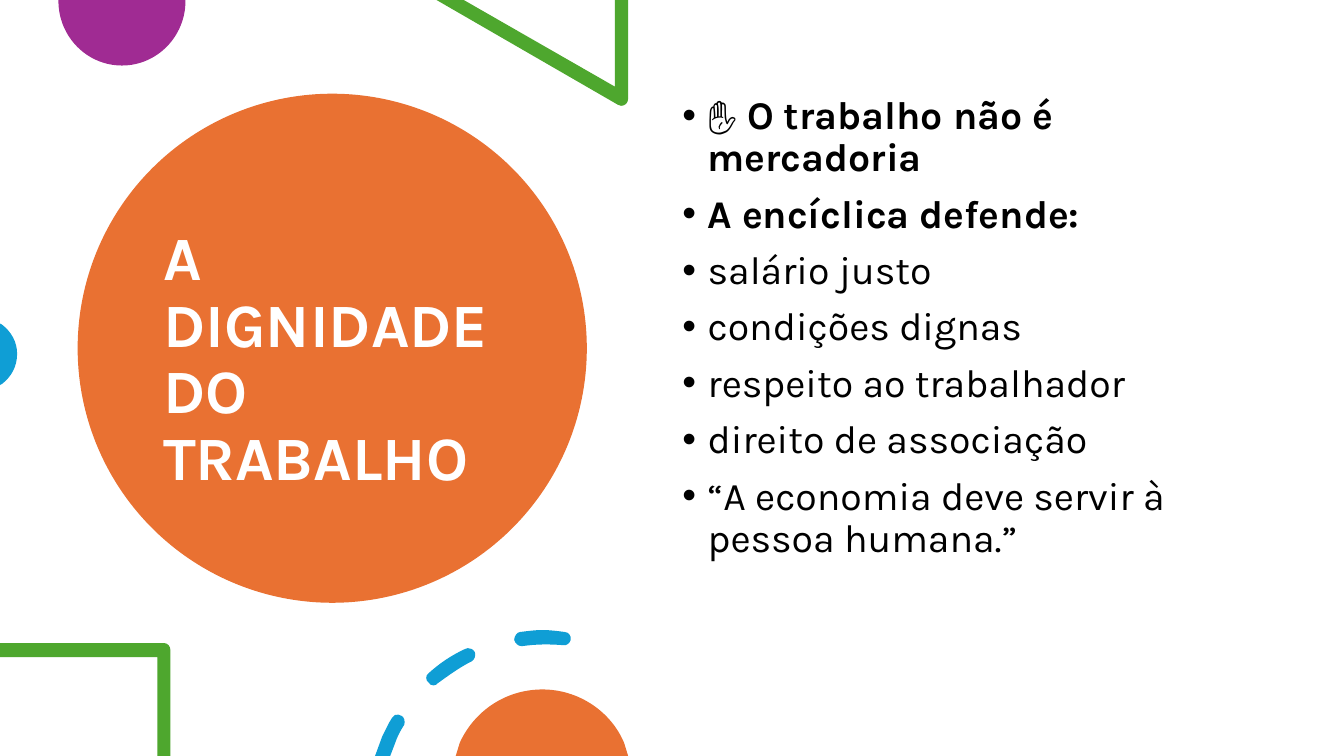
"""Build the slide on the dignity of work."""
from lxml import etree
from pptx import Presentation
from pptx import util as u
from pptx.dml.color import RGBColor
from pptx.enum import shapes, text
from pptx.oxml.ns import qn

FONT = "Karla"
ORANGE, PURPLE, GREEN, BLUE = "E97132", "A02B93", "4EA72E", "0F9ED5"
WHITE, BLACK = "FFFFFF", "000000"

TITLE = [("A DIGNIDADE DO TRABALHO", True)]
POINTS = [
    ("✋ O trabalho não é mercadoria", True),
    ("A encíclica defende:", True),
    ("salário justo", False),
    ("condições dignas", False),
    ("respeito ao trabalhador", False),
    ("direito de associação", False),
    ("“A economia deve servir à pessoa humana.”", False),
]

DISC = (0.77, 0.93, 5.05, 5.05)
TITLE_BOX = (1.52, 1.35, 3.54, 4.45)
POINTS_BOX = (6.67, 0.9, 5.75, 5.35)

TOP_DISC = [(1.84, 0), (0.58, 0), (0.58, 0.01), (0.58, 0.36, 0.86, 0.65, 1.21, 0.65),
            (1.56, 0.65, 1.84, 0.36, 1.84, 0.01)]
TRIANGLE = [(6.23, 0), (6.1, 0), (6.1, 0.86), (4.6, 0), (4.33, 0), (6.13, 1.04),
            (6.14, 1.05, 6.15, 1.05, 6.16, 1.05), (6.2, 1.05, 6.23, 1.02, 6.23, 0.98)]
LEFT_DISC = [(0, 3.21), (0, 3.82), (0.02, 3.81), (0.11, 3.74, 0.17, 3.64, 0.17, 3.51),
             (0.17, 3.39, 0.11, 3.29, 0.02, 3.22)]
FRAME = [(1.63, 6.38), (0, 6.38), (0, 6.52), (1.56, 6.52), (1.56, 7.5), (1.69, 7.5),
         (1.69, 6.45), (1.69, 6.41, 1.66, 6.38, 1.63, 6.38)]
LOW_DASH = [(3.95, 7.09), (3.93, 7.08, 3.9, 7.1, 3.89, 7.12),
            (3.85, 7.18, 3.82, 7.25, 3.79, 7.31), (3.72, 7.5), (3.87, 7.5), (3.92, 7.37),
            (3.94, 7.31, 3.97, 7.25, 4.01, 7.19), (4.02, 7.16, 4.01, 7.11, 3.98, 7.1),
            (3.97, 7.09, 3.96, 7.09, 3.95, 7.09)]
MID_DASH = [(4.64, 6.43), (4.63, 6.43, 4.62, 6.43, 4.61, 6.44),
            (4.48, 6.5, 4.36, 6.58, 4.25, 6.68), (4.22, 6.7, 4.22, 6.75, 4.25, 6.77),
            (4.26, 6.79, 4.28, 6.8, 4.3, 6.8), (4.32, 6.8, 4.33, 6.79, 4.34, 6.78),
            (4.45, 6.7, 4.56, 6.62, 4.68, 6.56), (4.71, 6.54, 4.72, 6.5, 4.71, 6.47),
            (4.69, 6.44, 4.67, 6.43, 4.64, 6.43)]
TOP_DASH = [(5.38, 6.25), (5.31, 6.25, 5.24, 6.26, 5.16, 6.27),
            (5.13, 6.27, 5.1, 6.31, 5.1, 6.35), (5.11, 6.38, 5.14, 6.41, 5.17, 6.41),
            (5.18, 6.41, 5.18, 6.41, 5.18, 6.41), (5.32, 6.39, 5.45, 6.39, 5.58, 6.4),
            (5.62, 6.41, 5.65, 6.38, 5.66, 6.35), (5.67, 6.31, 5.64, 6.27, 5.6, 6.27),
            (5.53, 6.26, 5.45, 6.25, 5.38, 6.25)]
LOW_DISC = [(5.38, 6.84), (5.01, 6.84, 4.7, 7.06, 4.56, 7.37), (4.52, 7.5), (6.23, 7.5),
            (6.19, 7.37), (6.06, 7.06, 5.74, 6.84, 5.38, 6.84)]
BACK_OUTLINES = [(PURPLE, [TOP_DISC]), (GREEN, [TRIANGLE]), (BLUE, [LEFT_DISC])]
FRONT_OUTLINES = [(GREEN, [FRAME]), (BLUE, [LOW_DASH, MID_DASH, TOP_DASH]),
                  (ORANGE, [LOW_DISC])]


def rgb(value):
    """Turn a hex string into a colour."""
    return RGBColor.from_string(value)


def paint(sp, color):
    """Give a shape a flat fill with no line or shadow."""
    sp.shadow.inherit = False
    sp.fill.solid()
    sp.fill.fore_color.rgb = rgb(color)
    sp.line.fill.background()


def add_outline(s, color, contours):
    """Draw one freeform; two numbers are a corner, six are a cubic curve."""
    rings = [[tuple(map(u.Inches, seg)) for seg in c] for c in contours]
    fb = s.shapes.build_freeform(*rings[0][0])
    for i, ring in enumerate(rings):
        if i:
            fb.move_to(*ring[0])
        fb.add_line_segments([seg[-2:] for seg in ring[1:]], close=True)
    sp = fb.convert_to_shape()
    segs = [seg for ring in rings for seg in ring[1:]]
    for line, seg in zip(list(sp._element.iter(qn("a:lnTo"))), segs):
        if len(seg) == 6:
            line.tag = qn("a:cubicBezTo")
            for k in (0, 2):
                pt = etree.Element(qn("a:pt"), x=str(seg[k] - sp.left),
                                   y=str(seg[k + 1] - sp.top))
                line.insert(k // 2, pt)
    paint(sp, color)


def add_text(s, box, lines, size, color, anchor, bullet=False):
    """Add a wrapped text box with one paragraph per line."""
    tf = s.shapes.add_textbox(*map(u.Inches, box)).text_frame
    tf.word_wrap = True
    tf.vertical_anchor = anchor
    for i, (line, bold) in enumerate(lines):
        p = tf.paragraphs[0] if i == 0 else tf.add_paragraph()
        p.line_spacing = 0.9
        p.space_before = u.Pt(10 if i else 0)
        if bullet:
            pPr = p._p.get_or_add_pPr()
            pPr.set("marL", str(u.Inches(0.25)))
            pPr.set("indent", str(u.Inches(-0.25)))
            etree.SubElement(pPr, qn("a:buFont")).set("typeface", "Arial")
            etree.SubElement(pPr, qn("a:buChar")).set("char", "•")
        r = p.add_run()
        r.text = line
        for name, value in {"name": FONT, "size": u.Pt(size), "bold": bold}.items():
            setattr(r.font, name, value)
        r.font.color.rgb = rgb(color)


def main():
    """Place every part of the slide and save it."""
    prs = Presentation()
    prs.slide_width, prs.slide_height = u.Inches(13.33), u.Inches(7.5)
    s = prs.slides.add_slide(prs.slide_layouts[6])
    sp = s.shapes.add_shape(shapes.MSO_SHAPE.OVAL, *map(u.Inches, DISC))
    paint(sp, ORANGE)
    add_text(s, TITLE_BOX, TITLE, 44, WHITE, text.MSO_ANCHOR.MIDDLE)
    for color, contours in BACK_OUTLINES:
        add_outline(s, color, contours)
    add_text(s, POINTS_BOX, POINTS, 28, BLACK, text.MSO_ANCHOR.TOP, bullet=True)
    for color, contours in FRONT_OUTLINES:
        add_outline(s, color, contours)
    prs.save("out.pptx")


if __name__ == "__main__":
    main()
